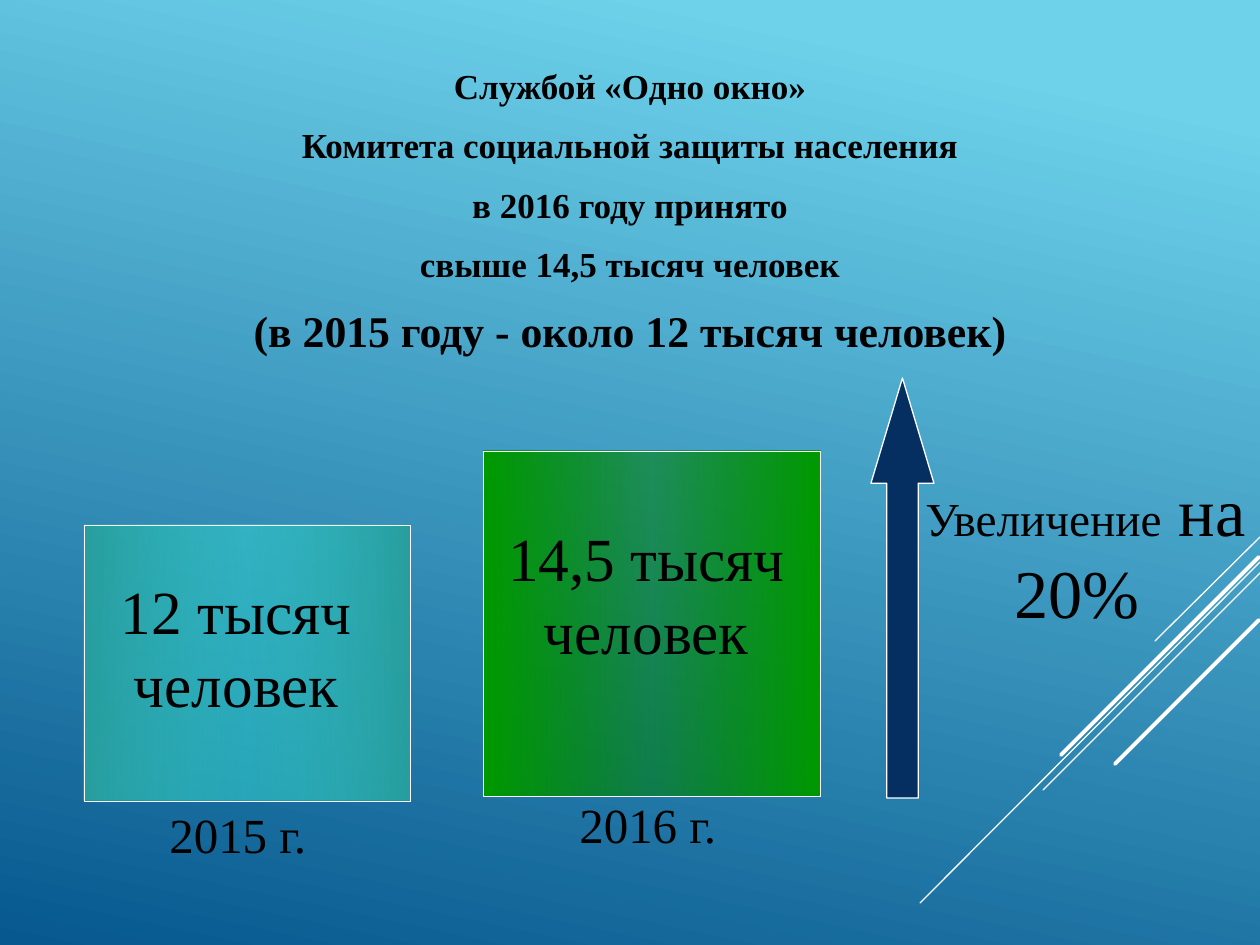
import pptx
import pptx.dml.color
import pptx.enum.shapes
import pptx.enum.text
import pptx.oxml.ns
import pptx.util
from lxml import etree

HEADING = [
    ("Службой «Одно окно»", 20),
    ("Комитета социальной защиты населения", 20),
    ("в 2016 году принято", 20),
    ("свыше 14,5 тысяч человек", 20),
    ("(в 2015 году - около 12 тысяч человек)", 25),
]
# Boxes are left, top, width, height in px
BARS = [
    {"box": (84, 525, 326, 276), "fill": "bar_2015",
     "value": "12 тысяч человек", "value_box": (84, 567, 305, 160),
     "year": "2015 г.", "year_box": (157, 798, 164, 72)},
    {"box": (483, 451, 337, 345), "fill": "bar_2016",
     "value": "14,5 тысяч человек", "value_box": (494, 514, 305, 161),
     "year": "2016 г.", "year_box": (567, 788, 164, 72)},
]
GROWTH = [[("Увеличение", 27), (" на 20% ", 39)]]
GROWTH_BOX = (911, 461, 349, 178)
ARROW_BOX = (871, 378, 63, 420)
# Start x, y, end x, y, weight in points
RAYS = [
    (1260, 537, 1155, 641, 0.75),
    (1260, 562, 920, 903, 0.75),
    (1260, 573, 1043, 790, 0.75),
    (1259, 557, 1061, 755, 2.25),
    (1259, 620, 1115, 764, 2.25),
]

THEME = {
    "font": "Times New Roman", "text": "000000", "line": "FFFFFF",
    "arrow": "052F61", "value_size": 35, "year_size": 28, "leading": 1.2,
    # Gradient stops: position, colour, opacity, all in percent
    "sky": [(10, "6ED2EB", 100), (100, "06588E", 100)],
    "bar_2015": [(0, "289E9E", 100), (50, "33CCCC", 59), (100, "289E9E", 100)],
    "bar_2016": [(0, "009A00", 100), (50, "008000", 53), (100, "009A00", 100)],
}
EMU_PER_PX = 914400 // 126
qn = pptx.oxml.ns.qn


def px(*lengths):
    return [n * 914400 // 126 for n in lengths]


def rgb(code):
    return pptx.dml.color.RGBColor.from_string(code)


def set_gradient(fill, root, stops, angle):
    """Give fill, found under root, its stops and a clockwise angle."""
    fill.gradient()
    grad = next(root.iter(qn("a:gradFill")))
    stop_list = grad.find(qn("a:gsLst"))
    for old in list(stop_list):
        stop_list.remove(old)
    for pos, code, opacity in stops:
        gs = etree.SubElement(stop_list, qn("a:gs"), pos=str(pos * 1000))
        clr = etree.SubElement(gs, qn("a:srgbClr"), val=code)
        if opacity < 100:
            etree.SubElement(clr, qn("a:alpha"), val=str(opacity * 1000))
    grad.find(qn("a:lin")).set("ang", str(angle * 60000))


def set_line(line, weight):
    line.color.rgb = rgb(THEME["line"])
    line.width = pptx.util.Pt(weight)


def add_text(s, box, paragraphs, align="CENTER", anchor="TOP", wrap=True,
             bold=False, after=0, before=0):
    """Add paragraphs of (text, size) runs; before is a share of the size."""
    tf = s.shapes.add_textbox(*px(*box)).text_frame
    tf.word_wrap = wrap
    tf.vertical_anchor = pptx.enum.text.MSO_ANCHOR[anchor]
    for i, runs in enumerate(paragraphs):
        p = tf.add_paragraph() if i else tf.paragraphs[0]
        p.alignment = pptx.enum.text.PP_ALIGN[align]
        size = max(pt for _, pt in runs)
        p.line_spacing = pptx.util.Pt(size * THEME["leading"])
        p.space_before = pptx.util.Pt(size * before if i else 0)
        p.space_after = pptx.util.Pt(after)
        for text, pt in runs:
            r = p.add_run()
            r.text = text
            r.font.name = THEME["font"]
            r.font.size = pptx.util.Pt(pt)
            r.font.bold = bold
            r.font.color.rgb = rgb(THEME["text"])


def add_preset(s, kind, box, weight):
    shape_type = pptx.enum.shapes.MSO_SHAPE[kind]
    sp = s.shapes.add_shape(shape_type, *px(*box))
    sp.shadow.inherit = False
    set_line(sp.line, weight)
    return sp


def add_ray(s, x1, y1, x2, y2, weight):
    straight = pptx.enum.shapes.MSO_CONNECTOR.STRAIGHT
    ray = s.shapes.add_connector(straight, *px(x1, y1, x2, y2))
    set_line(ray.line, weight)
    sp_pr = ray._element.spPr
    sp_pr.find(qn("a:ln")).set("cap", "rnd")
    etree.SubElement(sp_pr, qn("a:effectLst"))


def main():
    prs = pptx.Presentation()
    prs.slide_width, prs.slide_height = px(1260, 945)
    s = prs.slides.add_slide(prs.slide_layouts[6])
    set_gradient(s.background.fill, s._element, THEME["sky"], 102)

    for ray in RAYS:
        add_ray(s, *ray)
    add_text(s, (63, 58, 1134, 359), [[line] for line in HEADING],
             bold=True, after=6, before=0.2)

    for bar in BARS:
        sp = add_preset(s, "RECTANGLE", bar["box"], 0.25)
        set_gradient(sp.fill, sp._element, THEME[bar["fill"]], 0)
        add_text(s, bar["year_box"], [[(bar["year"], THEME["year_size"])]],
                 align="LEFT", wrap=False)
        add_text(s, bar["value_box"], [[(bar["value"], THEME["value_size"])]])

    arrow = add_preset(s, "UP_ARROW", ARROW_BOX, 0.75)
    arrow.fill.solid()
    arrow.fill.fore_color.rgb = rgb(THEME["arrow"])
    arrow.adjustments[0] = 0.5
    arrow.adjustments[1] = 1.67
    add_text(s, GROWTH_BOX, GROWTH, anchor="MIDDLE")

    prs.save("out.pptx")


if __name__ == "__main__":
    main()
